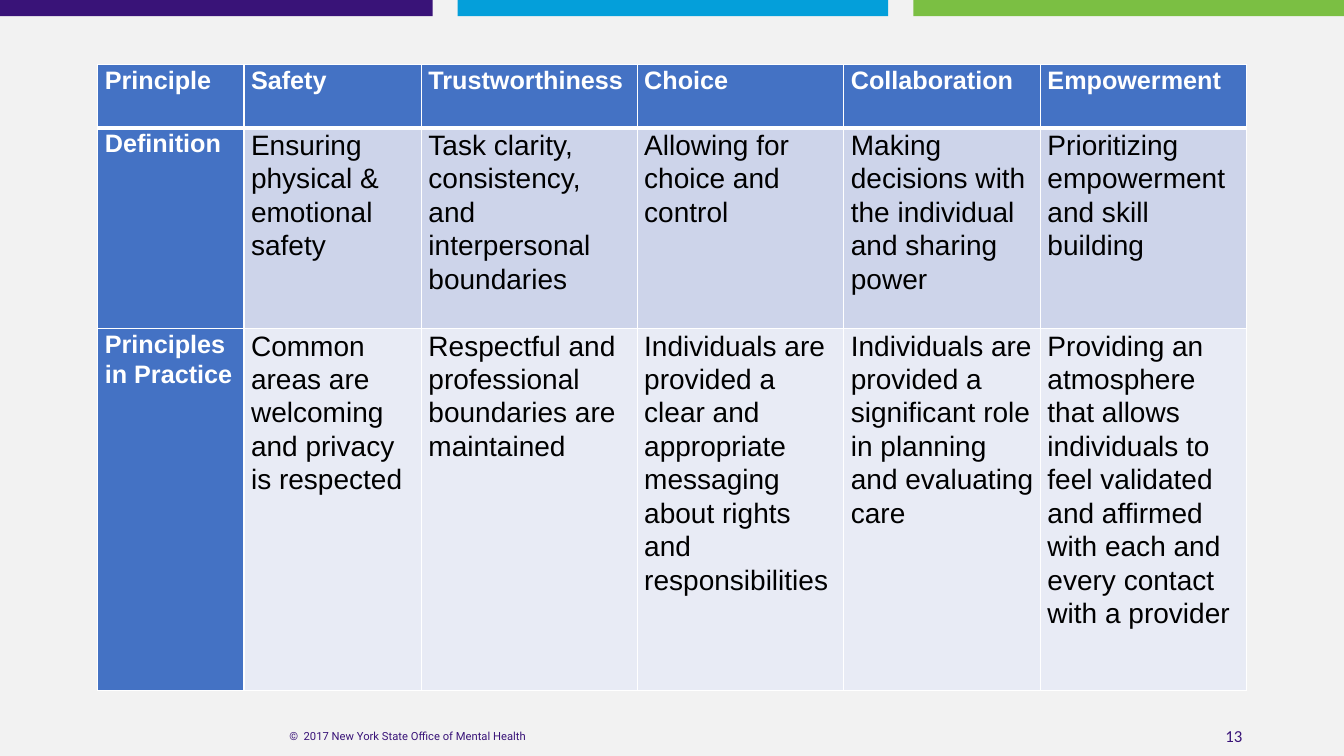
"""Build the slide that tabulates five care principles with definitions and practice."""
from lxml.etree import SubElement
from pptx import Presentation
from pptx.dml.color import RGBColor
from pptx.enum.shapes import MSO_SHAPE
from pptx.enum.text import MSO_ANCHOR, PP_ALIGN
from pptx.oxml.ns import qn
from pptx.util import Inches, Pt

WHITE = RGBColor(0xFF, 0xFF, 0xFF)
BLACK = RGBColor(0x00, 0x00, 0x00)
BACKDROP = RGBColor(0xF2, 0xF2, 0xF2)
PURPLE = RGBColor(0x39, 0x13, 0x78)
CYAN = RGBColor(0x04, 0x9F, 0xDA)
GREEN = RGBColor(0x7B, 0xBF, 0x43)
HEADER_BLUE = RGBColor(0x44, 0x72, 0xC4)
DEFINITION_TINT = RGBColor(0xCD, 0xD4, 0xEA)
PRACTICE_TINT = RGBColor(0xE8, 0xEB, 0xF5)

SLIDE_WIDTH, SLIDE_HEIGHT = 13.33, 7.5
BAND_HEIGHT = 0.16
PANELS = [
    (0, SLIDE_WIDTH, SLIDE_HEIGHT, BACKDROP),
    (0, 4.29, BAND_HEIGHT, PURPLE),
    (4.54, 4.27, BAND_HEIGHT, CYAN),
    (9.06, 4.27, BAND_HEIGHT, GREEN),
]
FOOTERS = [
    ("13", 9.42, 3, PP_ALIGN.RIGHT, "Calibri", 12),
    ("©  2017 New York State Office of Mental Health", 1.81, 4.47, PP_ALIGN.CENTER, "Roboto", 8),
]
PRINCIPLES = [
    ("Principle", "Definition", "Principles in Practice"),
    ("Safety", "Ensuring physical & emotional safety",
     "Common areas are welcoming and privacy is respected"),
    ("Trustworthiness", "Task clarity, consistency, and interpersonal boundaries",
     "Respectful and professional boundaries are maintained"),
    ("Choice", "Allowing for choice and control",
     "Individuals are provided a clear and appropriate messaging about rights and responsibilities"),
    ("Collaboration", "Making decisions with the individual and sharing power",
     "Individuals are provided a significant role in planning and evaluating care"),
    ("Empowerment", "Prioritizing empowerment and skill building",
     "Providing an atmosphere that allows individuals to feel validated and affirmed "
     "with each and every contact with a provider"),
]
COLUMN_WIDTHS = [1.45, 1.76, 2.14, 2.05, 1.95, 2.04]
ROW_HEIGHTS = [0.63, 1.99, 3.59]
ROW_TINTS = [HEADER_BLUE, DEFINITION_TINT, PRACTICE_TINT]


def style_text(paragraph, font_name, size, color, bold=False):
    font = paragraph.runs[0].font
    font.name, font.size, font.bold = font_name, Pt(size), bold
    font.color.rgb = color


def add_panel(slide, left, width, height, color):
    panel = slide.shapes.add_shape(
        MSO_SHAPE.RECTANGLE, Inches(left), 0, Inches(width), Inches(height))
    panel.shadow.inherit = False
    panel.fill.solid()
    panel.fill.fore_color.rgb = color
    panel.line.fill.background()


def add_footer(slide, text, left, width, alignment, font_name, size):
    footer = slide.shapes.add_textbox(Inches(left), Inches(7.1), Inches(width), Inches(0.4))
    frame = footer.text_frame
    frame.word_wrap = True
    frame.vertical_anchor = MSO_ANCHOR.MIDDLE
    frame.text = text
    frame.paragraphs[0].alignment = alignment
    style_text(frame.paragraphs[0], font_name, size, PURPLE)


def add_borders(cell, top, bottom):
    properties = cell._tc.get_or_add_tcPr()
    for side, points in (("L", 1), ("R", 1), ("T", top), ("B", bottom)):
        border = SubElement(properties, qn(f"a:ln{side}"), w=str(Pt(points)))
        fill = SubElement(border, qn("a:solidFill"))
        SubElement(fill, qn("a:srgbClr"), val=str(WHITE))


def fill_cell(cell, text, row, is_heading):
    cell.margin_left = cell.margin_right = Inches(0.07)
    cell.margin_top = cell.margin_bottom = 0
    cell.text_frame.text = text
    paragraph = cell.text_frame.paragraphs[0]
    paragraph.line_spacing = 1.07
    if is_heading:
        style_text(paragraph, "Arial", 18, WHITE, bold=True)
    else:
        style_text(paragraph, "Arial", 20, BLACK)
    add_borders(cell, top=3 if row == 1 else 1, bottom=3 if row == 0 else 1)
    cell.fill.solid()
    cell.fill.fore_color.rgb = HEADER_BLUE if is_heading else ROW_TINTS[row]


def add_principles(slide):
    table = slide.shapes.add_table(
        len(ROW_HEIGHTS), len(COLUMN_WIDTHS), Inches(0.97), Inches(0.64),
        Inches(sum(COLUMN_WIDTHS)), Inches(sum(ROW_HEIGHTS))).table
    table.first_col = True
    for row, height in enumerate(ROW_HEIGHTS):
        table.rows[row].height = Inches(height)
    for column, (width, texts) in enumerate(zip(COLUMN_WIDTHS, PRINCIPLES)):
        table.columns[column].width = Inches(width)
        for row, text in enumerate(texts):
            fill_cell(table.cell(row, column), text, row, row == 0 or column == 0)


def main():
    presentation = Presentation()
    presentation.slide_width = Inches(SLIDE_WIDTH)
    presentation.slide_height = Inches(SLIDE_HEIGHT)
    slide = presentation.slides.add_slide(presentation.slide_layouts[6])
    for panel in PANELS:
        add_panel(slide, *panel)
    for footer in FOOTERS:
        add_footer(slide, *footer)
    add_principles(slide)
    presentation.save("out.pptx")


if __name__ == "__main__":
    main()
